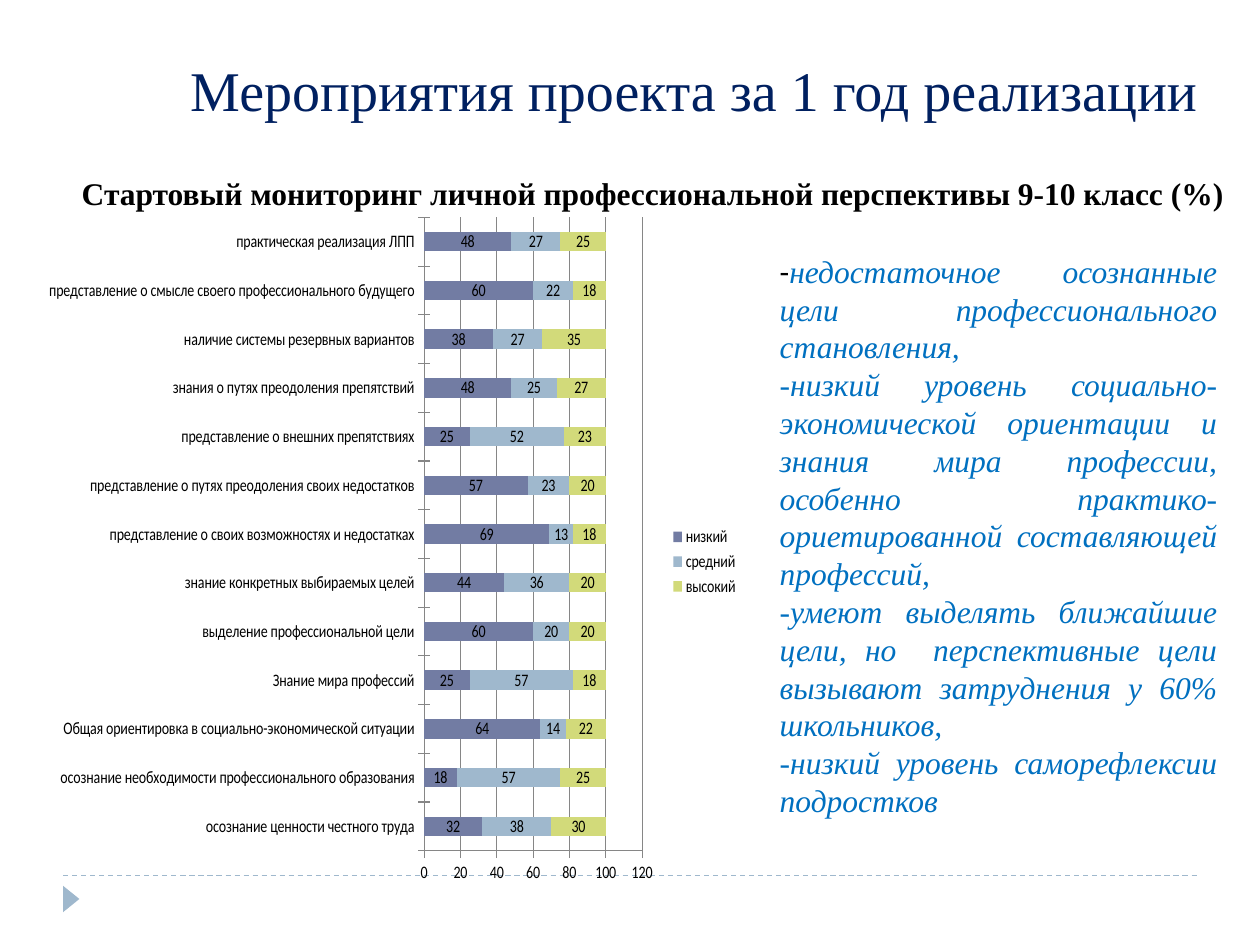
from lxml import etree
from pptx import Presentation
from pptx import util as u
from pptx.chart.data import CategoryChartData
from pptx.dml.color import RGBColor
from pptx.enum import chart as ch, dml, shapes, text
from pptx.oxml import parse_xml
from pptx.oxml.ns import nsdecls, qn

NAVY = RGBColor(0x00, 0x20, 0x60)
BLACK = RGBColor(0x00, 0x00, 0x00)
BLUE = RGBColor(0x00, 0x70, 0xC0)
GRAY = RGBColor(0x86, 0x86, 0x86)
SLATE = RGBColor(0x72, 0x7C, 0xA3)
SKY = RGBColor(0x9F, 0xB8, 0xCD)
LIME = RGBColor(0xD2, 0xDA, 0x7A)

SERIF = "Times New Roman"
SANS = "Calibri"

# Monitoring results: criterion, then low, medium and high level in percent
LEVELS = {"низкий": SLATE, "средний": SKY, "высокий": LIME}
RESULTS = [
    ("осознание ценности честного труда", 32, 38, 30),
    ("осознание необходимости профессионального образования", 18, 57, 25),
    ("Общая ориентировка в социально-экономической ситуации", 64, 14, 22),
    ("Знание мира профессий", 25, 57, 18),
    ("выделение профессиональной цели", 60, 20, 20),
    ("знание конкретных выбираемых целей", 44, 36, 20),
    ("представление о своих возможностях и недостатках", 69, 13, 18),
    ("представление о путях преодоления своих недостатков", 57, 23, 20),
    ("представление о внешних препятствиях", 25, 52, 23),
    ("знания о путях преодоления препятствий", 48, 25, 27),
    ("наличие системы резервных вариантов", 38, 27, 35),
    ("представление о смысле своего профессионального будущего", 60, 22, 18),
    ("практическая реализация ЛПП", 48, 27, 25),
]
FINDINGS = [
    "недостаточное осознанные цели профессионального становления, ",
    "-низкий уровень социально-экономической ориентации и знания мира профессии, "
    "особенно практико-ориетированной составляющей профессий,",
    "-умеют выделять ближайшие цели, но  перспективные цели вызывают "
    "затруднения у 60% школьников,",
    "-низкий уровень саморефлексии подростков",
]

TITLE = {"name": SERIF, "size": u.Pt(32), "color": NAVY}
HEADING = {"name": SERIF, "size": u.Pt(18), "color": BLACK, "bold": True}
FINDING = {"name": SERIF, "size": u.Pt(18), "color": BLUE, "italic": True}
DASH = {"name": SANS, "size": u.Pt(18), "color": BLACK}
CHART = {"name": SANS, "size": u.Pt(10), "color": BLACK}


def box(*lengths):
    return [u.Inches(length) for length in lengths]


def apply_font(font, style):
    for key, value in style.items():
        if key == "color":
            font.color.rgb = value
        else:
            setattr(font, key, value)


class SlideBuilder:
    def __init__(self, slide):
        self.slide = slide

    def dashed_rule(self, start, end, color):
        rule = self.slide.shapes.add_connector(
            shapes.MSO_CONNECTOR.STRAIGHT, *box(*start, *end))
        rule.line.color.rgb = color
        rule.line.width = u.Pt(0.75)
        rule.line.dash_style = dml.MSO_LINE.DASH
        etree.SubElement(rule._element.spPr, qn("a:effectLst"))

    def triangle(self, place, color, rotation):
        marker = self.slide.shapes.add_shape(
            shapes.MSO_SHAPE.ISOSCELES_TRIANGLE, *box(*place))
        marker.rotation = rotation
        marker.shadow.inherit = False
        marker.fill.solid()
        marker.fill.fore_color.rgb = color
        marker.line.fill.background()

    def text(self, place, paragraphs, align):
        """Each paragraph is a list of (wording, style) runs."""
        frame = self.slide.shapes.add_textbox(*box(*place)).text_frame
        frame.word_wrap = True
        frame.auto_size = text.MSO_AUTO_SIZE.SHAPE_TO_FIT_TEXT
        for index, runs in enumerate(paragraphs):
            paragraph = frame.add_paragraph() if index else frame.paragraphs[0]
            paragraph.alignment = align
            for wording, style in runs:
                run = paragraph.add_run()
                run.text = wording
                apply_font(run.font, style)

    def stacked_bars(self, place, results, levels, plot_area):
        criteria, *columns = zip(*results)
        data = CategoryChartData(number_format="General")
        data.categories = criteria
        for level, values in zip(levels, columns):
            data.add_series(level, values)
        chart = self.slide.shapes.add_chart(
            ch.XL_CHART_TYPE.BAR_STACKED, *box(*place), data).chart
        apply_font(chart.font, CHART)
        chart.has_title = False

        # Bars and their values
        plot = chart.plots[0]
        plot.vary_by_categories = False
        plot.overlap, plot.gap_width = 100, 150
        for series, color in zip(plot.series, levels.values()):
            series.format.fill.solid()
            series.format.fill.fore_color.rgb = color
            series.data_labels.show_value = True

        # Axes and grid
        for axis in (chart.category_axis, chart.value_axis):
            axis.major_tick_mark = ch.XL_TICK_MARK.CROSS
            axis.minor_tick_mark = ch.XL_TICK_MARK.NONE
            axis.format.line.color.rgb = GRAY
        scale = {"minimum_scale": 0, "maximum_scale": 120, "major_unit": 20,
                 "has_major_gridlines": True}
        for key, value in scale.items():
            setattr(chart.value_axis, key, value)
        chart.value_axis.major_gridlines.format.line.color.rgb = GRAY

        # Legend
        chart.has_legend = True
        chart.legend.position = ch.XL_LEGEND_POSITION.RIGHT
        chart.legend.include_in_layout = False
        self.fix_plot_area(chart, plot_area)

    def fix_plot_area(self, chart, fractions):
        area = chart._chartSpace.chart.plotArea
        for automatic in area.findall(qn("c:layout")):
            area.remove(automatic)
        sizes = "".join(f'<c:{side} val="{value}"/>'
                        for side, value in zip("xywh", fractions))
        area.insert(0, parse_xml(
            f'<c:layout {nsdecls("c")}><c:manualLayout>'
            '<c:layoutTarget val="inner"/><c:xMode val="edge"/>'
            f'<c:yMode val="edge"/>{sizes}</c:manualLayout></c:layout>'))


def main():
    deck = Presentation()
    deck.slide_width, deck.slide_height = box(10, 7.5)
    page = SlideBuilder(deck.slides.add_slide(deck.slide_layouts[6]))

    # Footer decoration
    page.dashed_rule((0.5, 6.95), (9.5, 6.95), SKY)
    page.triangle((0.46, 7.07, 0.21, 0.13), SKY, rotation=90)

    # Monitoring chart
    page.stacked_bars((0.39, 1.72, 5.55, 5.47), RESULTS, LEVELS,
                      plot_area=(0.42, 0, 0.39, 0.92))

    # Title and heading
    page.text((1.41, 0.39, 8.2, 0.64),
              [[("Мероприятия проекта за 1 год реализации", TITLE)]],
              text.PP_ALIGN.CENTER)
    page.text((0.55, 1.33, 9.45, 0.4),
              [[("Стартовый мониторинг личной профессиональной перспективы "
                 "9-10 класс (%)", HEADING)]],
              text.PP_ALIGN.LEFT)

    # Findings, the first one opened by a plain dash
    findings = [[(finding, FINDING)] for finding in FINDINGS]
    findings[0].insert(0, ("-", DASH))
    page.text((6.09, 1.95, 3.67, 4.64), findings, text.PP_ALIGN.JUSTIFY)

    deck.save("out.pptx")


if __name__ == "__main__":
    main()
